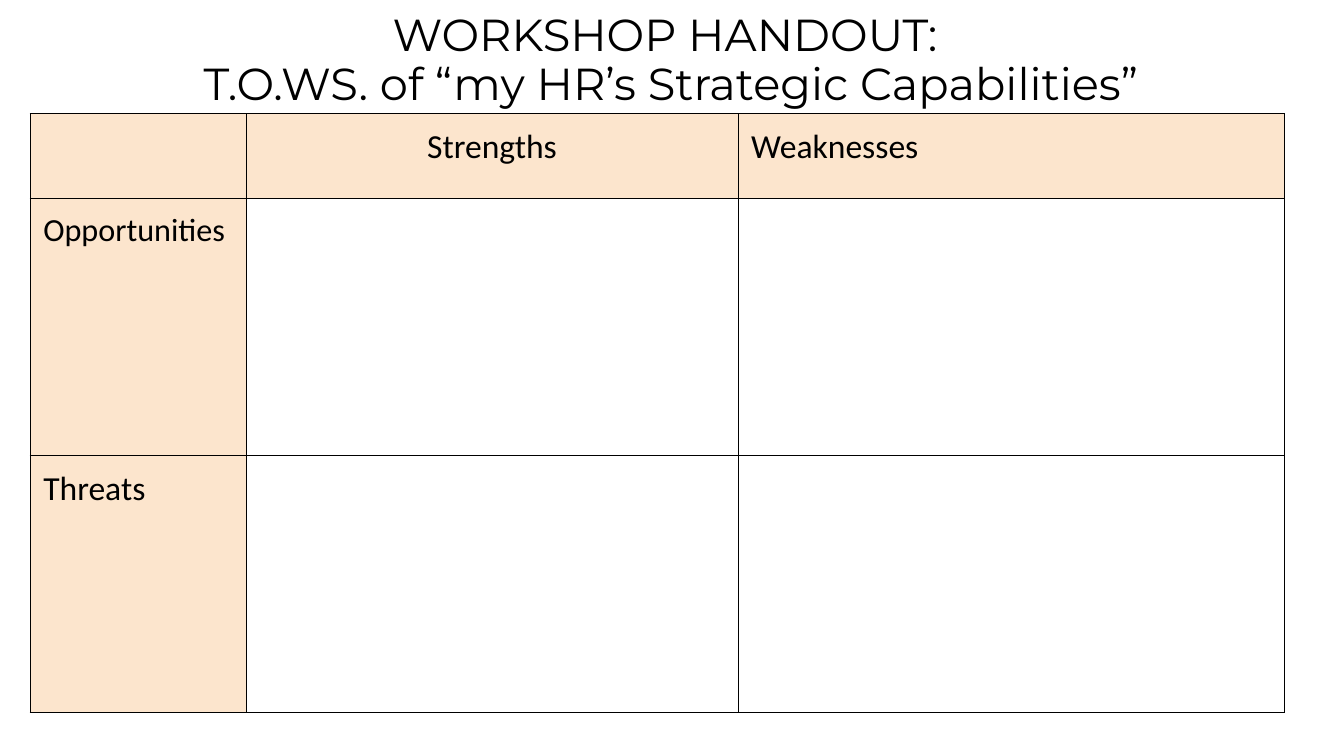
"""Build the T.O.W.S. workshop handout slide."""
from lxml import etree
from pptx import Presentation
from pptx.dml.color import RGBColor
from pptx.enum.text import MSO_ANCHOR, MSO_AUTO_SIZE, PP_ALIGN
from pptx.oxml.ns import qn
from pptx.util import Cm, Pt

TOP = MSO_ANCHOR.TOP
NO_AUTOFIT = MSO_AUTO_SIZE.NONE
CENTER, LEFT = PP_ALIGN.CENTER, PP_ALIGN.LEFT
BLACK, WHITE, PEACH = "000000", "FFFFFF", "FCE5CD"
INSET = Cm(0.33)


def color(hex_text):
    return RGBColor.from_string(hex_text)


def style(para, font, size, align):
    para.alignment = align
    for span in para.runs:
        span.font.name = font
        span.font.size = Pt(size)
        span.font.color.rgb = color(BLACK)


deck = Presentation()
deck.slide_width, deck.slide_height = Cm(33.87), Cm(19.05)
page = deck.slides.add_slide(deck.slide_layouts[5])

title = page.shapes.title
title.left, title.top, title.width, title.height = Cm(1.14), Cm(0), Cm(31.55), Cm(2.13)
frame = title.text_frame
frame.text = "WORKSHOP HANDOUT: \nT.O.WS. of “my HR’s Strategic Capabilities”"
frame.word_wrap = True
frame.auto_size = NO_AUTOFIT
frame.vertical_anchor = TOP
frame.margin_left = frame.margin_right = frame.margin_top = frame.margin_bottom = INSET
for para in frame.paragraphs:
    style(para, "Montserrat", 32, CENTER)
    para.line_spacing = 0.9
    para.space_before = Pt(0)

column_widths = [5.44, 12.4, 13.77]
row_heights = [2.13, 6.48, 6.48]
labels = {
    (0, 1): ("Strengths", 24, CENTER),
    (0, 2): ("Weaknesses", 24, LEFT),
    (1, 0): ("Opportunities", 23, LEFT),
    (2, 0): ("Threats", 24, LEFT),
}
table = page.shapes.add_table(
    3, 3, Cm(0.76), Cm(2.86), Cm(sum(column_widths)), Cm(sum(row_heights))
).table
table.first_row = table.horz_banding = False
for column, width in zip(table.columns, column_widths):
    column.width = Cm(width)

for row_index, height in enumerate(row_heights):
    table.rows[row_index].height = Cm(height)
    for column_index in range(len(column_widths)):
        cell = table.cell(row_index, column_index)
        cell.margin_left = cell.margin_right = INSET
        cell.margin_top = cell.margin_bottom = INSET
        cell.vertical_anchor = TOP
        properties = cell._tc.get_or_add_tcPr()
        for side in ("lnL", "lnR", "lnT", "lnB"):
            border = etree.SubElement(properties, qn(f"a:{side}"), w=str(Pt(0.75)))
            paint = etree.SubElement(border, qn("a:solidFill"))
            etree.SubElement(paint, qn("a:srgbClr"), val=BLACK)
        is_header = row_index == 0 or column_index == 0
        cell.fill.solid()
        cell.fill.fore_color.rgb = color(PEACH if is_header else WHITE)
        if (row_index, column_index) in labels:
            text, size, align = labels[row_index, column_index]
            cell.text_frame.text = text
            style(cell.text_frame.paragraphs[0], "Calibri", size, align)

deck.save("out.pptx")
